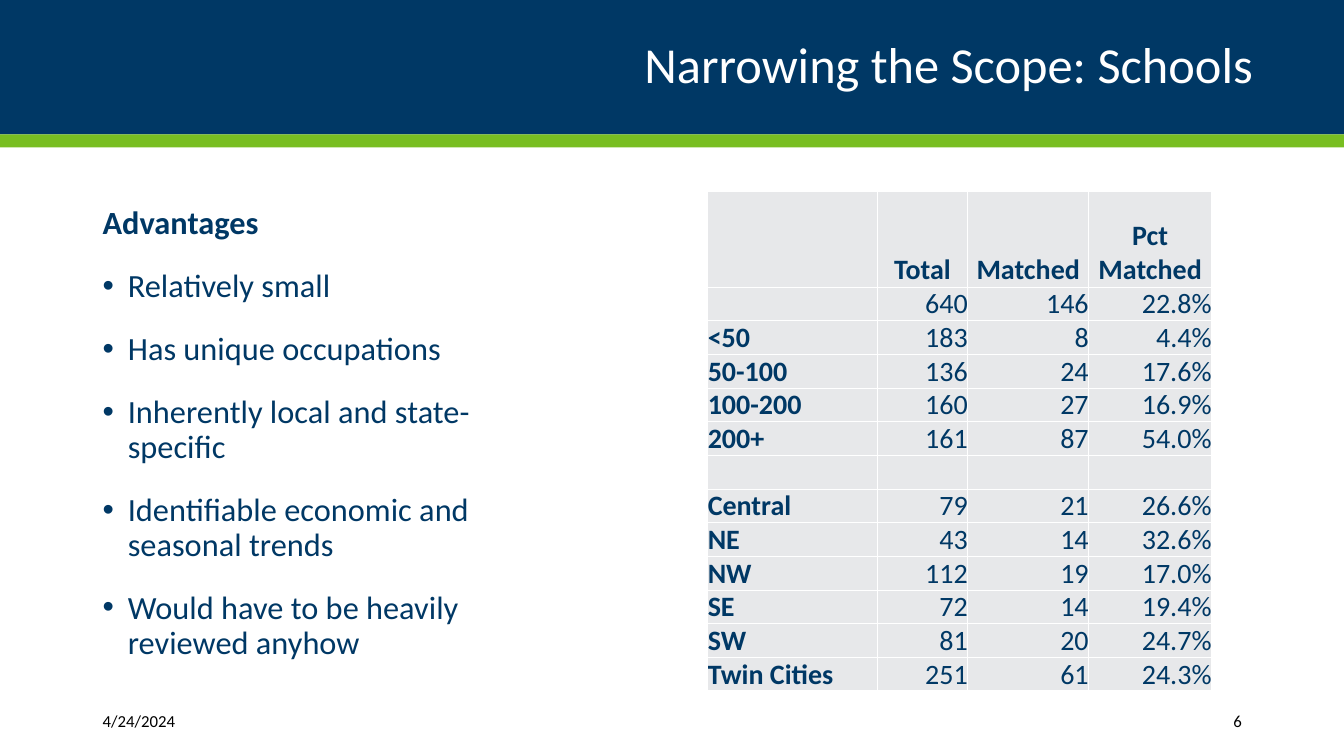
"""Build the slide on narrowing the scope to schools."""
from typing import NamedTuple

from lxml.etree import SubElement
from pptx import Presentation
from pptx.dml.color import RGBColor
from pptx.enum.shapes import MSO_SHAPE
from pptx.enum.text import MSO_ANCHOR as Anchor, MSO_AUTO_SIZE as AutoSize, PP_ALIGN as Align
from pptx.oxml.ns import qn
from pptx.util import Inches, Pt

WIDTH, HEIGHT = Inches(13.333), Inches(7.5)
NAVY, GREEN, GREY, WHITE, BLACK = "003865", "78BE21", "E7E8EA", "FFFFFF", "000000"
FONT = "Calibri"


class Area(NamedTuple):
    """Place and size in percent of the slide's width and height."""
    left: float
    top: float
    width: float
    height: float


class Footer(NamedTuple):
    """A small text at the foot of the slide."""
    text: str
    area: Area
    align: Align


FOOTERS = [
    Footer("4/24/2024", Area(6.9, 92.67, 11.18, 5.33), Align.LEFT),
    Footer("6", Area(81.15, 92.67, 12, 5.33), Align.RIGHT),
]
ADVANTAGES = [
    "Relatively small",
    "Has unique occupations",
    "Inherently local and state-specific",
    "Identifiable economic and seasonal trends",
    "Would have to be heavily reviewed anyhow",
]
MATCHES = [
    ("", "Total", "Matched", "Pct Matched"),
    ("", "640", "146", "22.8%"),
    ("<50", "183", "8", "4.4%"),
    ("50-100", "136", "24", "17.6%"),
    ("100-200", "160", "27", "16.9%"),
    ("200+", "161", "87", "54.0%"),
    ("", "", "", ""),
    ("Central", "79", "21", "26.6%"),
    ("NE", "43", "14", "32.6%"),
    ("NW", "112", "19", "17.0%"),
    ("SE", "72", "14", "19.4%"),
    ("SW", "81", "20", "24.7%"),
    ("Twin Cities", "251", "61", "24.3%"),
]
COLUMN_SHARES = (12.6, 6.75, 9, 9.15)
HEADER_SHARE, ROW_SHARE = 12.67, 4.27


def color(code: str) -> RGBColor:
    """Turn a hex string into a colour."""
    return RGBColor.from_string(code)


def across(share: float) -> int:
    """Return a percentage of the slide's width."""
    return round(WIDTH * share / 100)


def down(share: float) -> int:
    """Return a percentage of the slide's height."""
    return round(HEIGHT * share / 100)


def place(area: Area) -> tuple[int, int, int, int]:
    """Return an area as left, top, width and height."""
    return across(area.left), down(area.top), across(area.width), down(area.height)


def write(paragraph, text: str, *, size: float, ink: str = NAVY, bold: bool = False,
          align: Align = Align.LEFT, line: float = 1, gap: float = 0, bullet: str = "") -> None:
    """Write formatted text into a paragraph."""
    paragraph.alignment = align
    paragraph.line_spacing = line
    paragraph.space_before = paragraph.space_after = Pt(gap)
    if bullet:
        properties = paragraph._p.get_or_add_pPr()
        properties.set("marL", str(Inches(0.25)))
        properties.set("indent", str(-Inches(0.25)))
        SubElement(SubElement(properties, qn("a:buClr")), qn("a:srgbClr"), val=ink)
        SubElement(properties, qn("a:buFont"), typeface="Arial")
        SubElement(properties, qn("a:buChar"), char=bullet)
    if not text:
        SubElement(paragraph._p, qn("a:endParaRPr"), sz=str(size * 100))
        return
    run = paragraph.add_run()
    run.text = text
    run.font.name, run.font.size, run.font.bold = FONT, Pt(size), bold
    run.font.color.rgb = color(ink)


def add_frame(slide, area: Area, anchor: Anchor):
    """Add a wrapping text box and return its text frame."""
    frame = slide.shapes.add_textbox(*place(area)).text_frame
    frame.word_wrap = True
    frame.vertical_anchor = anchor
    return frame


def add_heading(slide, text: str) -> None:
    """Fill the title band and draw the stripe below it."""
    title = slide.shapes.title
    title.left, title.top, title.width, title.height = place(Area(0, 0, 100, 17.78))
    title.fill.solid()
    title.fill.fore_color.rgb = color(NAVY)
    frame = title.text_frame
    frame.auto_size = AutoSize.NONE
    frame.vertical_anchor = Anchor.MIDDLE
    frame.margin_left = frame.margin_right = Inches(0.9)
    write(frame.paragraphs[0], text, size=36, ink=WHITE, align=Align.RIGHT, line=0.9)
    stripe = slide.shapes.add_shape(MSO_SHAPE.RECTANGLE, *place(Area(0, 17.78, 100, 1.73)))
    stripe.shadow.inherit = False
    stripe.fill.solid()
    stripe.fill.fore_color.rgb = color(GREEN)
    stripe.line.fill.background()


def add_advantages(slide) -> None:
    """Add the list of advantages under its heading."""
    frame = add_frame(slide, Area(6.9, 26.67, 32.5, 63.47), Anchor.TOP)
    style = {"size": 23.1, "line": 0.9, "gap": 10}
    write(frame.paragraphs[0], "Advantages", bold=True, **style)
    for advantage in ADVANTAGES:
        write(frame.add_paragraph(), advantage, bullet="•", **style)


def format_cell(cell, text: str, *, bold: bool, align: Align) -> None:
    """Format one cell with thin white borders and a grey fill."""
    properties = cell._tc.get_or_add_tcPr()
    for side in ("lnL", "lnR", "lnT", "lnB"):
        border = SubElement(properties, qn(f"a:{side}"), w=str(Pt(1)))
        SubElement(SubElement(border, qn("a:solidFill")), qn("a:srgbClr"), val=WHITE)
    cell.fill.solid()
    cell.fill.fore_color.rgb = color(GREY)
    cell.margin_left = cell.margin_right = cell.margin_top = cell.margin_bottom = 0
    cell.vertical_anchor = Anchor.BOTTOM
    write(cell.text_frame.paragraphs[0], text, size=20, bold=bold, align=align)


def add_matches(slide) -> None:
    """Add the table of matched schools by size and region."""
    height = HEADER_SHARE + ROW_SHARE * (len(MATCHES) - 1)
    area = Area(52.66, 25.33, sum(COLUMN_SHARES), height)
    table = slide.shapes.add_table(len(MATCHES), len(COLUMN_SHARES), *place(area)).table
    table.first_row = table.horz_banding = False
    for column, share in zip(table.columns, COLUMN_SHARES):
        column.width = across(share)
    for row, texts in enumerate(MATCHES):
        table.rows[row].height = down(ROW_SHARE if row else HEADER_SHARE)
        for column, text in enumerate(texts):
            align = Align.LEFT if column == 0 else Align.RIGHT if row else Align.CENTER
            format_cell(table.cell(row, column), text, bold=row == 0 or column == 0, align=align)


def main() -> None:
    """Build and save the slide."""
    deck = Presentation()
    deck.slide_width, deck.slide_height = WIDTH, HEIGHT
    slide = deck.slides.add_slide(deck.slide_layouts[5])
    add_heading(slide, "Narrowing the Scope: Schools")
    add_advantages(slide)
    for footer in FOOTERS:
        frame = add_frame(slide, footer.area, Anchor.MIDDLE)
        write(frame.paragraphs[0], footer.text, size=12, ink=BLACK, align=footer.align)
    add_matches(slide)
    deck.save("out.pptx")


if __name__ == "__main__":
    main()
